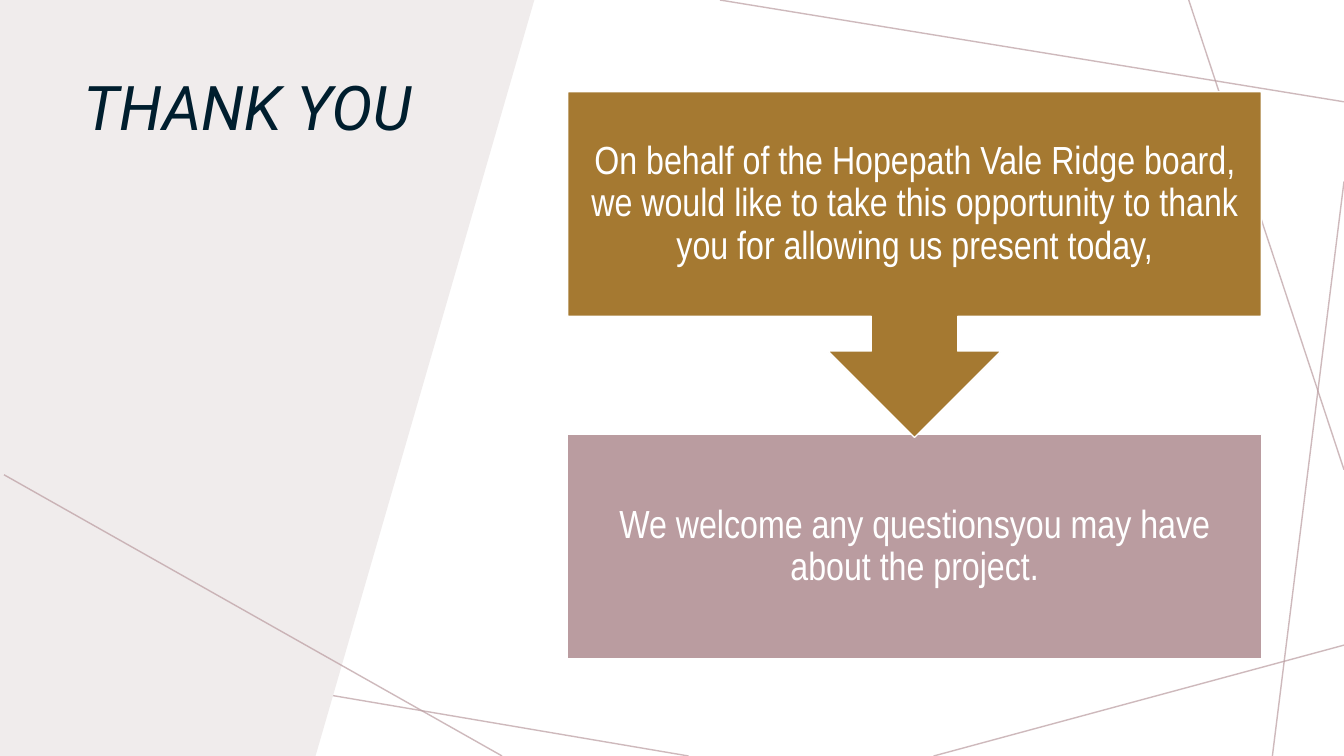
"""Build the closing thank-you slide."""
from lxml import etree
from pptx import Presentation
from pptx.dml.color import RGBColor
from pptx.enum import shapes, text
from pptx.oxml import ns
from pptx.util import Inches, Pt

WHITE = RGBColor(0xFF, 0xFF, 0xFF)
NAVY = RGBColor(0x00, 0x1E, 0x2E)
MAUVE = RGBColor(0xBA, 0x9C, 0xA0)
GOLD = RGBColor(0xA5, 0x79, 0x31)
PALE = RGBColor(0xF0, 0xEC, 0xEC)

BACK_LINES = [
    (6.83, 7.5, 0, 6.34),
    (13.33, 6.4, 9.26, 7.5),
    (13.33, 1.8, 12.62, 7.5),
    (13.33, 4.66, 11.79, 0),
    (13.33, 1.01, 7.14, 0),
]
FRONT_LINE = (0.04, 4.71, 4.98, 7.5)
PANEL_POINTS = [(0, 7.5), (0, 0), (5.3, 0), (3.13, 7.5)]

CARD_LEFT, CARD_WIDTH, CARD_HEIGHT = 5.63, 6.88, 2.23
THANKS_TOP, QUESTIONS_TOP, CALLOUT_HEIGHT = 0.91, 4.31, 3.43

TITLE_FONT = {"name": "Roboto", "size": Pt(44), "italic": True}
CARD_FONT = {"name": "Arial Narrow", "size": Pt(28)}


def add_accent_line(slide, ends):
    """Draw a thin translucent line between two points."""
    line = slide.shapes.add_connector(
        shapes.MSO_CONNECTOR.STRAIGHT, *[Inches(value) for value in ends])
    line.line.color.rgb = MAUVE
    line.line.width = Pt(1)
    properties = line._element.spPr
    color = properties.find(".//" + ns.qn("a:srgbClr"))
    etree.SubElement(color, ns.qn("a:alpha"), val="70000")
    etree.SubElement(properties, ns.qn("a:effectLst"))


def add_panel(slide):
    """Draw the slanted panel on the left."""
    points = [(Inches(x), Inches(y)) for x, y in PANEL_POINTS]
    builder = slide.shapes.build_freeform(*points[0], scale=1.0)
    builder.add_line_segments(points[1:], close=True)
    panel = builder.convert_to_shape()
    panel.shadow.inherit = False
    panel.fill.solid()
    panel.fill.fore_color.rgb = PALE
    panel.line.fill.background()


def add_card(slide, kind, top, height, color):
    """Draw a filled card with a white outline."""
    card = slide.shapes.add_shape(
        kind, Inches(CARD_LEFT), Inches(top), Inches(CARD_WIDTH), Inches(height))
    card.shadow.inherit = False
    card.fill.solid()
    card.fill.fore_color.rgb = color
    card.line.color.rgb = WHITE
    card.line.width = Pt(1)
    return card


def write_text(shape, words, font, color, alignment):
    """Write one wrapped paragraph into a shape."""
    frame = shape.text_frame
    frame.word_wrap = True
    paragraph = frame.paragraphs[0]
    paragraph.alignment = alignment
    paragraph.line_spacing = 0.9
    run = paragraph.add_run()
    run.text = words
    for name, value in font.items():
        setattr(run.font, name, value)
    run.font.color.rgb = color


def write_card_text(shape, words):
    """Centre white text in a card."""
    frame = shape.text_frame
    frame.vertical_anchor = text.MSO_ANCHOR.MIDDLE
    for side in ("left", "top", "right", "bottom"):
        setattr(frame, f"margin_{side}", Inches(0.22))
    write_text(shape, words, CARD_FONT, WHITE, text.PP_ALIGN.CENTER)


def main():
    """Build and save the slide."""
    presentation = Presentation()
    presentation.slide_width = Inches(13.33)
    presentation.slide_height = Inches(7.5)
    slide = presentation.slides.add_slide(presentation.slide_layouts[6])

    for ends in BACK_LINES:
        add_accent_line(slide, ends)
    add_panel(slide)
    title = slide.shapes.add_textbox(
        Inches(0.73), Inches(0.72), Inches(3.53), Inches(3.9))
    write_text(title, "THANK YOU", TITLE_FONT, NAVY, text.PP_ALIGN.LEFT)
    add_accent_line(slide, FRONT_LINE)

    questions = add_card(slide, shapes.MSO_SHAPE.RECTANGLE,
                         QUESTIONS_TOP, CARD_HEIGHT, MAUVE)
    write_card_text(
        questions, "We welcome any questionsyou may have about the project.")
    callout = add_card(slide, shapes.MSO_SHAPE.UP_ARROW_CALLOUT,
                       THANKS_TOP, CALLOUT_HEIGHT, GOLD)
    callout.rotation = 180
    thanks = slide.shapes.add_textbox(
        Inches(CARD_LEFT), Inches(THANKS_TOP), Inches(CARD_WIDTH), Inches(CARD_HEIGHT))
    write_card_text(
        thanks, "On behalf of the Hopepath Vale Ridge board, we would like to take "
        "this opportunity to thank you for allowing us present today,")

    presentation.save("out.pptx")


if __name__ == "__main__":
    main()
